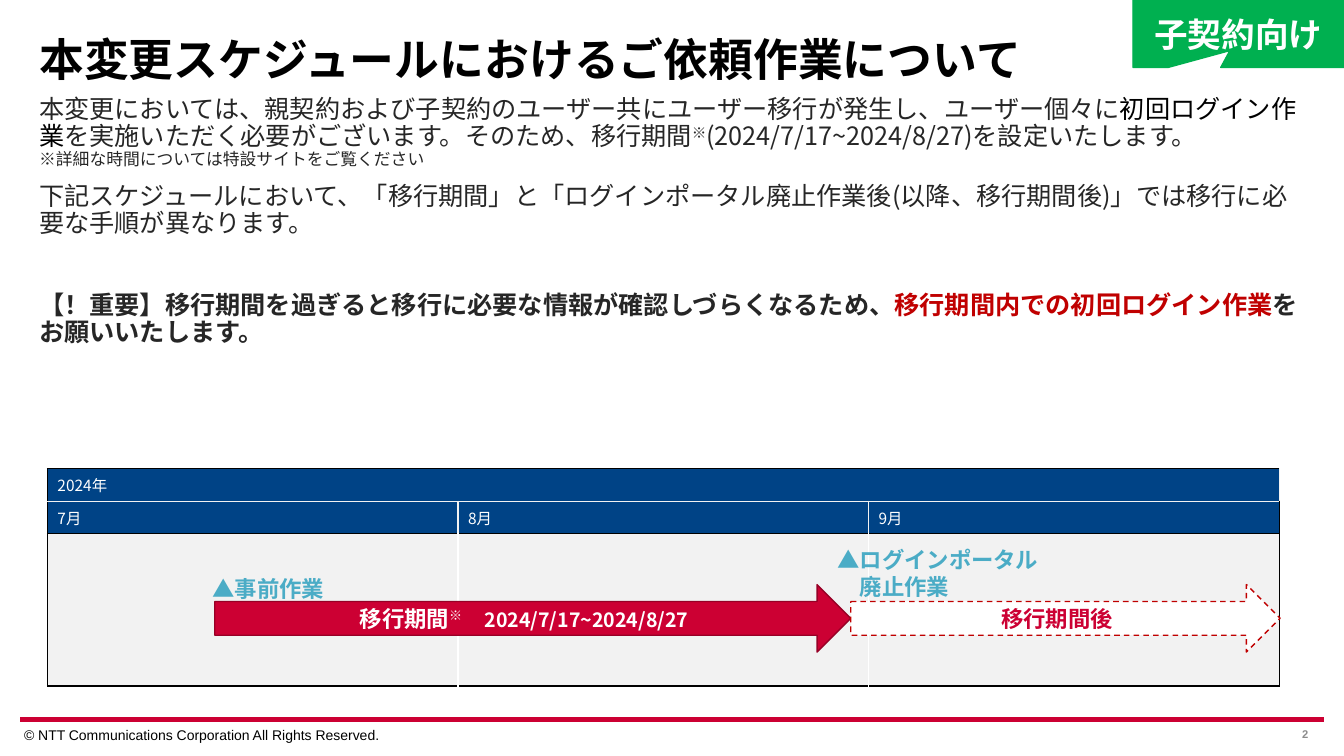
"""Build the migration schedule slide."""
from dataclasses import dataclass
from typing import Optional, Sequence

from lxml import etree
from pptx import Presentation
from pptx import util as u
from pptx.dml.color import RGBColor
from pptx.enum import dml, shapes, text
from pptx.oxml import ns

Pt = u.Pt
ALIGN = text.PP_ALIGN
ANCHOR = text.MSO_ANCHOR
KIND = shapes.MSO_SHAPE


@dataclass(frozen=True)
class Theme:
    japanese: str = "Noto Sans CJK JP"
    latin: str = "Arial"
    black: str = "000000"
    white: str = "FFFFFF"
    ink: str = "262626"
    grey: str = "8C8C8C"
    pale: str = "F2F2F2"
    navy: str = "004386"
    crimson: str = "CC0033"
    maroon: str = "970026"
    red: str = "C00000"
    sky: str = "4BACC6"
    green: str = "00B050"
    title: float = 32
    badge: float = 24
    body: float = 18
    label: float = 16
    dates: float = 14
    note: float = 12
    month: float = 11
    footer: float = 10
    page: float = 8


T = Theme()


@dataclass(frozen=True)
class Run:
    words: str
    size: float
    color: str
    bold: bool = False
    font: str = T.japanese
    raised: bool = False
    new_line: bool = False


@dataclass(frozen=True)
class Para:
    runs: Sequence[Run]
    before: float = 0
    spacing: Optional[float] = None
    indent: float = 0
    align: ALIGN = ALIGN.LEFT


@dataclass(frozen=True)
class Box:
    left: float
    top: float
    width: float
    height: float
    paras: Sequence[Para]
    margins: Sequence[float] = (7.2, 3.6, 7.2, 3.6)
    anchor: ANCHOR = ANCHOR.TOP
    wrap: bool = True

    def frame(self) -> list:
        return [Pt(v) for v in (self.left, self.top, self.width, self.height)]


@dataclass(frozen=True)
class Block:
    box: Box
    kind: KIND
    fill: str
    line: str
    dashed: bool = False
    adjustments: Sequence[float] = ()


def rgb(color: str) -> RGBColor:
    return RGBColor.from_string(color)


def add_run(paragraph, part: Run) -> None:
    if part.new_line:
        paragraph.add_line_break()
    run = paragraph.add_run()
    run.text = part.words
    run.font.size = Pt(part.size)
    run.font.bold = part.bold
    run.font.color.rgb = rgb(part.color)
    run.font.name = part.font
    properties = run._r.get_or_add_rPr()
    etree.SubElement(properties, ns.qn("a:ea"), typeface=part.font)
    if part.raised:
        properties.set("baseline", "30000")


def write(frame, box: Box) -> None:
    frame.word_wrap = box.wrap
    frame.auto_size = text.MSO_AUTO_SIZE.NONE
    frame.vertical_anchor = box.anchor
    (frame.margin_left, frame.margin_top,
     frame.margin_right, frame.margin_bottom) = map(Pt, box.margins)
    for index, para in enumerate(box.paras):
        paragraph = frame.add_paragraph() if index else frame.paragraphs[0]
        paragraph.alignment = para.align
        paragraph.space_before = Pt(para.before)
        if para.spacing:
            paragraph.line_spacing = para.spacing
        if para.indent:
            paragraph._p.get_or_add_pPr().set("marL", str(Pt(para.indent)))
        for part in para.runs:
            add_run(paragraph, part)


def add_text(slide, box: Box) -> None:
    write(slide.shapes.add_textbox(*box.frame()).text_frame, box)


def add_block(slide, block: Block) -> None:
    shape = slide.shapes.add_shape(block.kind, *block.box.frame())
    shape.shadow.inherit = False
    for index, value in enumerate(block.adjustments):
        shape.adjustments[index] = value
    shape.fill.solid()
    shape.fill.fore_color.rgb = rgb(block.fill)
    shape.line.color.rgb = rgb(block.line)
    shape.line.width = Pt(1)
    if block.dashed:
        shape.line.dash_style = dml.MSO_LINE.DASH
    write(shape.text_frame, block.box)


def set_borders(cell, colors: Sequence[str]) -> None:
    properties = cell._tc.get_or_add_tcPr()
    for index, (side, color) in enumerate(zip("LRTB", colors)):
        line = etree.Element(ns.qn(f"a:ln{side}"), w=str(Pt(1)))
        fill = etree.SubElement(line, ns.qn("a:solidFill"))
        etree.SubElement(fill, ns.qn("a:srgbClr"), val=color)
        properties.insert(index, line)


def add_calendar(slide) -> None:
    rows = (("2024年", "", ""), ("7月", "8月", "9月"), ("", "", ""))
    heights = (23, 23.3, 108.7)
    levels = (T.black, T.pale, T.black, T.black)
    table = slide.shapes.add_table(
        3, 3, Pt(33.84), Pt(334.8), Pt(879.84), Pt(sum(heights))).table
    table.first_row = table.horz_banding = False
    for column in table.columns:
        column.width = Pt(293.28)
    for r, (labels, height) in enumerate(zip(rows, heights)):
        table.rows[r].height = Pt(height)
        inner = T.white if r == 2 else T.pale
        edges = (T.black, inner, inner, T.black)
        for c, label in enumerate(labels):
            cell = table.cell(r, c)
            cell.fill.solid()
            cell.fill.fore_color.rgb = rgb(T.pale if r == 2 else T.navy)
            cell.vertical_anchor = ANCHOR.MIDDLE
            set_borders(cell, (*edges[c:c + 2], *levels[r:r + 2]))
            if label:
                add_run(cell.text_frame.paragraphs[0], Run(label, T.month, T.white))
    table.cell(0, 0).merge(table.cell(0, 2))


def add_footer_rule(slide) -> None:
    rule = slide.shapes.add_connector(
        shapes.MSO_CONNECTOR.STRAIGHT, Pt(14.4), Pt(514), Pt(946), Pt(514))
    rule.line.color.rgb = rgb(T.crimson)
    rule.line.width = Pt(3)
    etree.SubElement(rule._element.spPr, ns.qn("a:effectLst"))


def shape_box(left: float, top: float, width: float, height: float,
              *runs: Run, wrap: bool = False) -> Box:
    return Box(left, top, width, height, [Para(runs, align=ALIGN.CENTER)],
               (5.76,) * 4, ANCHOR.MIDDLE, wrap)


def label(words: str, color: str) -> Run:
    return Run(words, T.label, color, True)


HEADING = Box(20.9, 20.9, 828, 33.1, [Para(
    [Run("本変更スケジュールにおけるご依頼作業について", T.title, T.black, True)],
    spacing=0.9)], (7.2, 5.76, 7.2, 2.88))
COPYRIGHT = Box(17.2, 519.1, 324, 12.2, [Para([Run(
    "© NTT Communications Corporation All Rights Reserved.",
    T.footer, T.black, font=T.latin)])], (0,) * 4)
PAGE = Box(723.6, 513.4, 216, 22.3, [Para(
    [Run("2", T.page, T.grey, True, T.latin)], align=ALIGN.RIGHT)],
    (5, 0, 5, 0), ANCHOR.MIDDLE)
EXPLANATION = Box(20.9, 65.5, 915.8, 430.6, [
    Para([
        Run("本変更においては、親契約および子契約のユーザー共にユーザー移行が発生し、ユーザー個々に", T.body, T.ink),
        Run("初回ログイン作業", T.body, T.black),
        Run("を実施いただく必要がございます。そのため、移行期間", T.body, T.ink),
        Run("※", T.body, T.ink, raised=True),
        Run("(2024/7/17~2024/8/27)を設定いたします。", T.body, T.ink),
        Run("※詳細な時間については特設サイトをご覧ください", T.note, T.ink, new_line=True),
    ], spacing=0.9),
    Para([Run("下記スケジュールにおいて、「移行期間」と「ログインポータル廃止作業後(以降、移行期間後)」"
              "では移行に必要な手順が異なります。", T.body, T.ink)], 10, 0.9),
    Para([
        Run("【！重要】移行期間を過ぎると移行に必要な情報が確認しづらくなるため、", T.body, T.ink, True),
        Run("移行期間内での初回ログイン作業", T.body, T.red, True),
        Run("をお願いいたします。", T.body, T.ink, True),
    ], 39, 0.9),
])
PERIOD = Block(shape_box(
    153.4, 417.6, 454.3, 48.2, label("移行期間", T.white),
    Run("※", T.label, T.white, True, raised=True), label("　", T.white),
    Run("2024/7/17~2024/8/27", T.dates, T.white, True)),
    KIND.RIGHT_ARROW, T.crimson, T.maroon)
AFTER_PERIOD = Block(
    shape_box(607.7, 417.6, 306.7, 48.2, label("移行期間後", T.crimson)),
    KIND.RIGHT_ARROW, T.white, T.red, dashed=True)
AUDIENCE = Block(
    shape_box(809.3, 0, 150.5, 48.2,
              Run("子契約向け", T.badge, T.white, True), wrap=True),
    KIND.RECTANGULAR_CALLOUT, T.green, T.green, adjustments=(-0.04, 0.25))
PORTAL_CLOSING = Box(591.1, 386.6, 159.8, 46.1, [
    Para([label("▲ログインポータル", T.sky)]),
    Para([label("廃止作業", T.sky)], indent=T.label)], wrap=False)
PREPARATION = Box(144.7, 407.5, 95, 26.6,
                  [Para([label("▲事前作業", T.sky)])], wrap=False)


def main() -> None:
    deck = Presentation()
    deck.slide_width, deck.slide_height = Pt(960), Pt(540)
    slide = deck.slides.add_slide(deck.slide_layouts[5])
    title = slide.shapes.title
    title.left, title.top, title.width, title.height = HEADING.frame()
    write(title.text_frame, HEADING)
    add_text(slide, COPYRIGHT)
    add_footer_rule(slide)
    for box in (PAGE, EXPLANATION):
        add_text(slide, box)
    add_calendar(slide)
    add_block(slide, PERIOD)
    for milestone in (PORTAL_CLOSING, PREPARATION):
        add_text(slide, milestone)
    for block in (AFTER_PERIOD, AUDIENCE):
        add_block(slide, block)
    deck.save("out.pptx")


if __name__ == "__main__":
    main()
